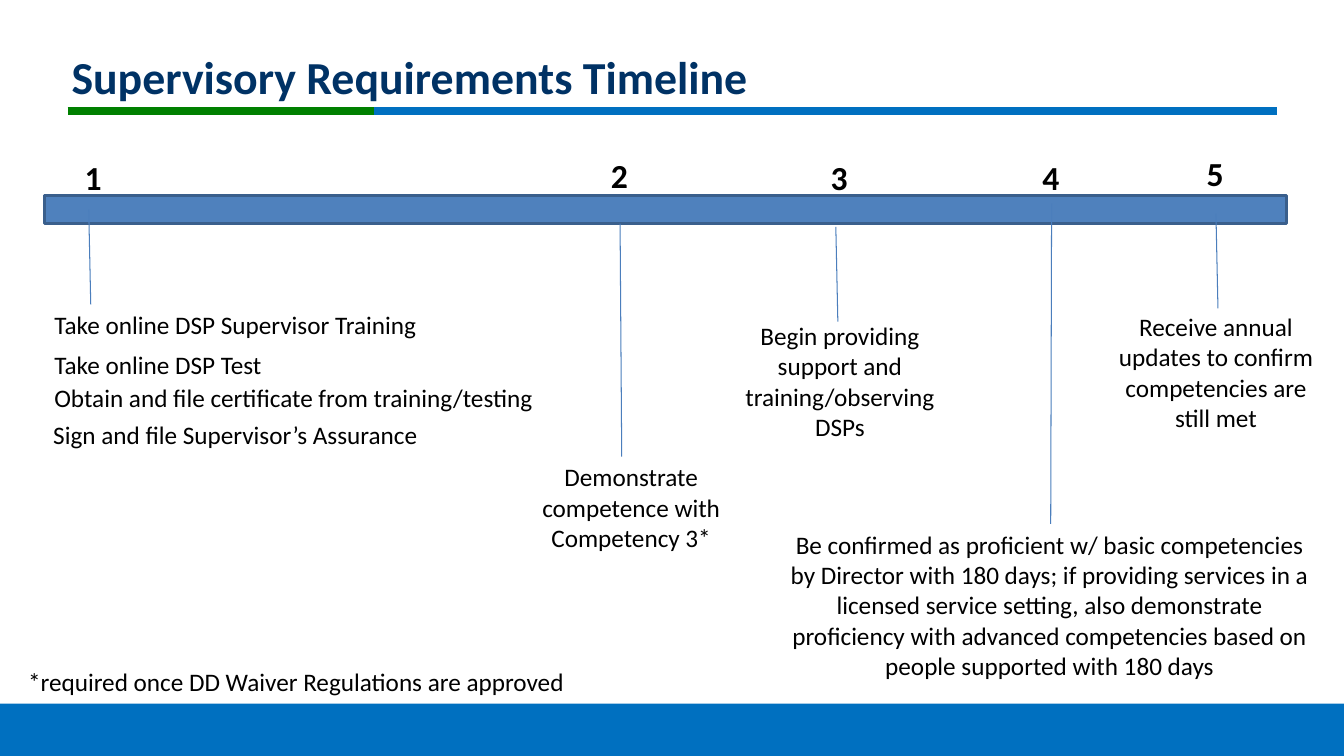
from dataclasses import dataclass

from lxml.etree import SubElement
from pptx import Presentation
from pptx.dml.color import RGBColor
from pptx.enum.shapes import MSO_CONNECTOR, MSO_SHAPE
from pptx.enum.text import MSO_AUTO_SIZE, PP_ALIGN
from pptx.oxml.ns import qn
from pptx.util import Inches, Pt

COLUMNS, ROWS = 13.33, 7.5
WIDTH, HEIGHT = Inches(COLUMNS), Inches(ROWS)
NAVY, GREEN, BLUE = "003265", "008000", "0070C0"
BAR_FILL, BAR_EDGE, STEM = "4F81BD", "3A5F8C", "4B7EBC"
BLACK, WHITE = "000000", "FFFFFF"
LABEL_HEIGHT = 0.4

TASKS = [
    ("Take online DSP Supervisor Training", 0, 1.55, 3.95),
    ("Take online DSP Test", 0, 1.95, 2.28),
    ("Obtain and file certificate from training/testing", 0, 2.27, 5.01),
    ("Sign and file Supervisor’s Assurance", -0.01, 2.64, 3.86),
]
MILESTONES = [
    ((0.3, 0.04), (0.44, 0.61, 0.46, 1.55), None, "", None),
    ((5.52, 0.02), (5.71, 0.75, 5.73, 3.54), (4.51, 3.06, 2.62, 1.01),
     "Demonstrate competence with Competency 3*", WHITE),
    ((7.7, 0.04), (7.85, 0.78, 7.87, 1.72), (6.8, 1.66, 2.18, 1.31),
     "Begin providing support and training/observing DSPs", None),
    ((9.8, 0.04), (9.99, 0.55, 9.98, 4.22), (7.23, 3.73, 5.48, 1.62),
     "Be confirmed as proficient w/ basic competencies\n"
     "by Director with 180 days; if providing services in a licensed service "
     "setting, also demonstrate proficiency with advanced competencies based "
     "on people supported with 180 days", WHITE),
    ((11.43, 0), (11.62, 0.65, 11.64, 1.59), (10.53, 1.57, 2.18, 1.31),
     "Receive annual updates to confirm competencies are still met", None),
]


@dataclass
class Box:
    """A region measured in grid columns and rows."""
    left: float
    top: float
    width: float
    height: float

    def inner(self, left, top, width, height):
        """Return a box placed relative to this one."""
        return Box(self.left + left, self.top + top, width, height)

    def lengths(self):
        """Return the box as slide lengths."""
        return (int(WIDTH * self.left / COLUMNS), int(HEIGHT * self.top / ROWS),
                int(WIDTH * self.width / COLUMNS), int(HEIGHT * self.height / ROWS))


def color(value):
    """Turn a hex string into a colour."""
    return RGBColor.from_string(value)


def add_text(page, box, text, size=18, ink=BLACK, bold=False, align=PP_ALIGN.LEFT,
             wrap=True, inset=None, fill=None):
    """Add a text box with one paragraph per line of text."""
    shape = page.shapes.add_textbox(*box.lengths())
    if fill:
        shape.fill.solid()
        shape.fill.fore_color.rgb = color(fill)
    frame = shape.text_frame
    frame.word_wrap = wrap
    frame.auto_size = MSO_AUTO_SIZE.SHAPE_TO_FIT_TEXT
    if inset is not None:
        frame.margin_left = frame.margin_right = inset
        frame.margin_top = frame.margin_bottom = inset
    frame.text = text
    for para in frame.paragraphs:
        para.alignment = align
        for span in para.runs:
            span.font.name = "Calibri"
            span.font.size = Pt(size)
            span.font.bold = bold
            span.font.color.rgb = color(ink)


def add_line(page, box, x1, y1, x2, y2, ink, weight):
    """Draw a straight line between two points of a box."""
    left, top, width, height = box.inner(x1, y1, x2 - x1, y2 - y1).lengths()
    line = page.shapes.add_connector(
        MSO_CONNECTOR.STRAIGHT, left, top, left + width, top + height)
    line.line.color.rgb = color(ink)
    line.line.width = Pt(weight)
    SubElement(line._element.spPr, qn("a:effectLst"))


def add_bar(page, box, fill, edge=None):
    """Draw a filled rectangle with an optional edge."""
    bar = page.shapes.add_shape(MSO_SHAPE.RECTANGLE, *box.lengths())
    bar.shadow.inherit = False
    bar.fill.solid()
    bar.fill.fore_color.rgb = color(fill)
    if edge:
        bar.line.color.rgb = color(edge)
        bar.line.width = Pt(2)
    else:
        bar.line.fill.background()


def add_header(page, box):
    """Place the title over its two-colour rule."""
    add_line(page, box, 0, box.height, 3.19, box.height, GREEN, 6)
    add_line(page, box, 3.04, box.height, box.width, box.height, BLUE, 6)
    add_text(page, box.inner(0.04, 0, 10.1, 0.55), "Supervisory Requirements Timeline",
             size=32.7, ink=NAVY, bold=True, inset=0)


def add_timeline(page, box):
    """Place the bar, the numbered milestones and the first tasks."""
    add_bar(page, box.inner(0, 0.47, box.width, 0.28), BAR_FILL, BAR_EDGE)
    for number, (spot, stem, place, text, fill) in enumerate(MILESTONES, 1):
        add_line(page, box, *stem, STEM, 0.75)
        add_text(page, box.inner(*spot, 0.37, 0.5), str(number),
                 size=24, bold=True, wrap=False)
        if place:
            add_text(page, box.inner(*place), text, align=PP_ALIGN.CENTER, fill=fill)
    for text, left, top, width in TASKS:
        add_text(page, box.inner(left, top, width, LABEL_HEIGHT), text, wrap=False)


def add_footer(page, box):
    """Place the bottom band and the footnote above it."""
    add_bar(page, box, BLUE)
    add_text(page, box.inner(0.18, -0.42, 5.59, LABEL_HEIGHT),
             "*required once DD Waiver Regulations are approved", wrap=False)


def main():
    """Build and save the deck."""
    deck = Presentation()
    deck.slide_width, deck.slide_height = WIDTH, HEIGHT
    page = deck.slides.add_slide(deck.slide_layouts[6])
    add_header(page, Box(0.67, 0.48, 12, 0.62))
    add_timeline(page, Box(0.44, 1.47, 12.32, 5.35))
    add_footer(page, Box(0, 6.98, COLUMNS, 0.52))
    deck.save("out.pptx")


if __name__ == "__main__":
    main()
